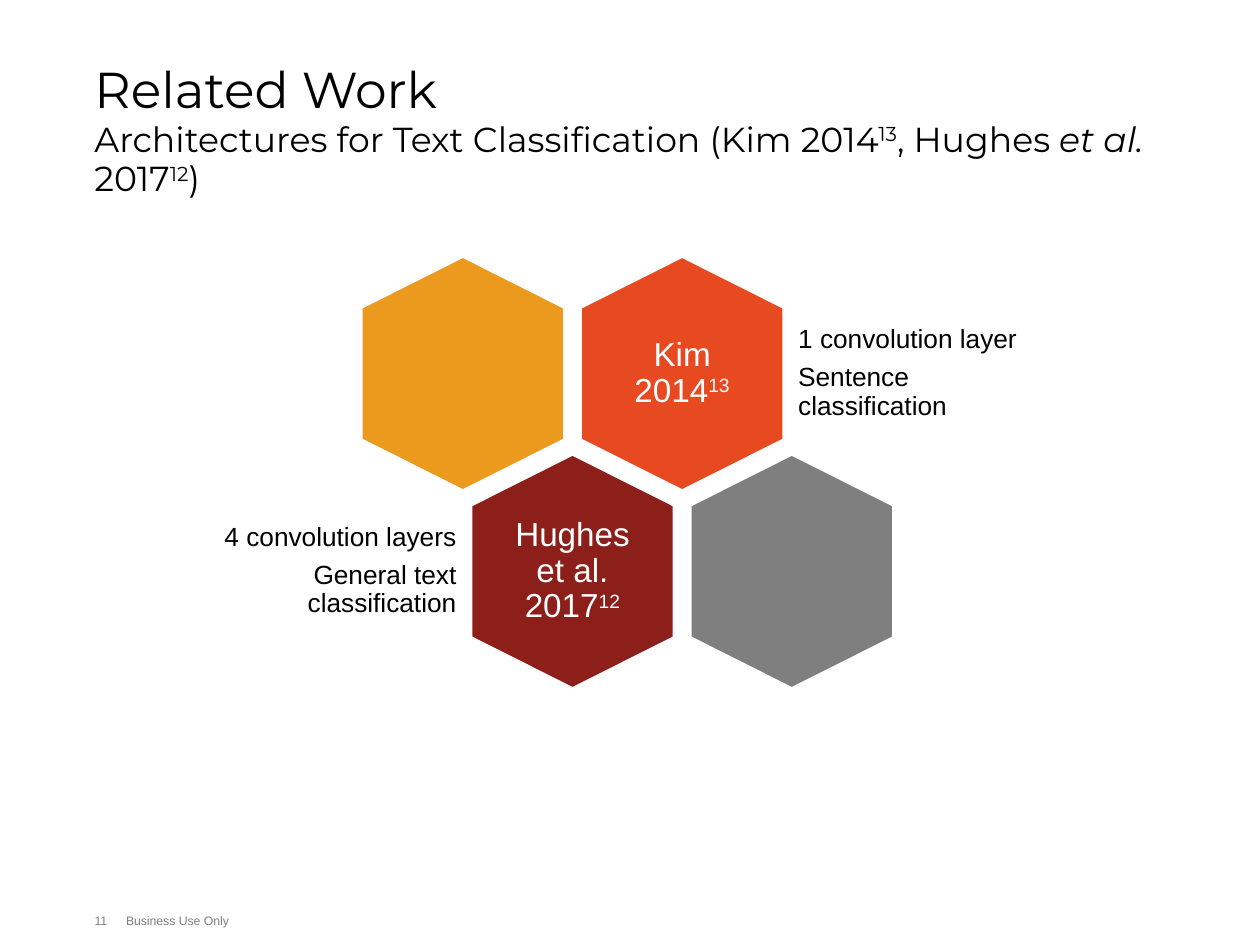
from pptx import Presentation
from pptx.dml.color import RGBColor
from pptx.enum.shapes import MSO_SHAPE
from pptx.enum.text import MSO_ANCHOR, PP_ALIGN
from pptx.util import Pt

HEX = MSO_SHAPE.HEXAGON
TOP, MID = MSO_ANCHOR.TOP, MSO_ANCHOR.MIDDLE
LEFT, CENTER, RIGHT = PP_ALIGN.LEFT, PP_ALIGN.CENTER, PP_ALIGN.RIGHT
COLORS = {"white": "FFFFFF", "black": "000000", "gray": "7F7F7F",
          "gold": "EC9A1E", "orange": "E74A21", "red": "8D1F1B"}
LONG, SHORT = 133.2, 116
STEP, DROP = 125.3, 113


def color(name):
    """Return the named colour."""
    return RGBColor.from_string(COLORS[name])


def write(slide, box, paras, size, tone="black", font="Arial", align=LEFT,
          anchor=TOP, inset=0, line=1.0, gap=0):
    """Add a text box; each paragraph is a list of (text, style) runs."""
    frame = slide.shapes.add_textbox(*map(Pt, box)).text_frame
    frame.word_wrap = True
    frame.vertical_anchor = anchor
    frame.margin_left = frame.margin_right = Pt(inset)
    frame.margin_top = frame.margin_bottom = Pt(inset)
    for i, runs in enumerate(paras):
        para = frame.add_paragraph() if i else frame.paragraphs[0]
        para.alignment = align
        para.line_spacing = line
        if i:
            para.space_before = Pt(gap)
        for text, style in runs:
            if style == "break":
                para.add_line_break()
                continue
            run = para.add_run()
            run.text = text
            run.font.name = font
            run.font.size = Pt(28.8 if style == "head" else size)
            run.font.color.rgb = color(tone)
            if style == "italic":
                run.font.italic = True
            if style == "super":
                run._r.get_or_add_rPr().set("baseline", "30000")


def title(slide, box):
    """Write the heading and its subtitle."""
    runs = [("Related Work", "head"), ("", "break"),
            ("Architectures for Text Classification (Kim 2014", ""),
            ("13", "super"), (", Hughes", ""), (" et al.", "italic"),
            (" 2017", ""), ("12", "super"), (")", "")]
    write(slide, box, [runs], 19.8, font="Montserrat", line=0.95)


def cell(slide, x, y, tone, label=None):
    """Draw an upright hexagon centred on x, y with an optional label."""
    shape = slide.shapes.add_shape(HEX, Pt(x - LONG / 2), Pt(y - SHORT / 2),
                                   Pt(LONG), Pt(SHORT))
    shape.rotation = 90
    shape.adjustments[0] = 0.25
    shape.adjustments[1] = 1.15
    shape.shadow.inherit = False
    shape.fill.solid()
    shape.fill.fore_color.rgb = color(tone)
    shape.line.color.rgb = color("white")
    shape.line.width = Pt(1)
    if label:
        text, ref = label
        write(slide, (x - 40, y - 45.7, 80, 91.4),
              [[(text, ""), (ref, "super")]], 19, "white", align=CENTER,
              anchor=MID, inset=5.8, line=0.9)


def note(slide, box, lines, align):
    """Write the remarks beside a hexagon."""
    write(slide, box, [[(text, "")] for text in lines], 15, align=align,
          anchor=MID, inset=4.3, line=0.9, gap=5.5)


def comb(slide, box):
    """Draw two staggered rows of hexagons with their notes."""
    left, top, width, height = box
    x, y = left + SHORT / 2, top + LONG / 2
    low = y + DROP
    cell(slide, x, y, "gold")
    cell(slide, x + STEP, y, "orange", ("Kim 2014", "13"))
    cell(slide, x + STEP / 2, low, "red", ("Hughes et al. 2017", "12"))
    cell(slide, x + STEP * 1.5, low, "gray")
    edge = SHORT / 2 + 4
    note(slide, (x + STEP + edge, y - 40, 149, 80),
         ["1 convolution layer", "Sentence classification"], LEFT)
    note(slide, (x + STEP / 2 - edge - 144, low - 40, 144, 80),
         ["4 convolution layers", "General text classification"], RIGHT)


def footer(slide, box):
    """Write the page number and the usage label."""
    left, top, width, height = box
    write(slide, (left, top, 18, height), [[("11", "")]], 7, "gray")
    write(slide, (left + 18, top, width - 18, height),
          [[("Business Use Only", "")]], 7, "gray")


def main():
    """Build and save the slide."""
    deck = Presentation()
    deck.slide_width, deck.slide_height = Pt(720), Pt(540)
    slide = deck.slides.add_slide(deck.slide_layouts[6])
    title(slide, (54, 36, 612, 75.6))
    comb(slide, (206.5, 146.9, 303.9, 246.2))
    footer(slide, (54, 522, 468, 18))
    deck.save("out.pptx")


if __name__ == "__main__":
    main()
